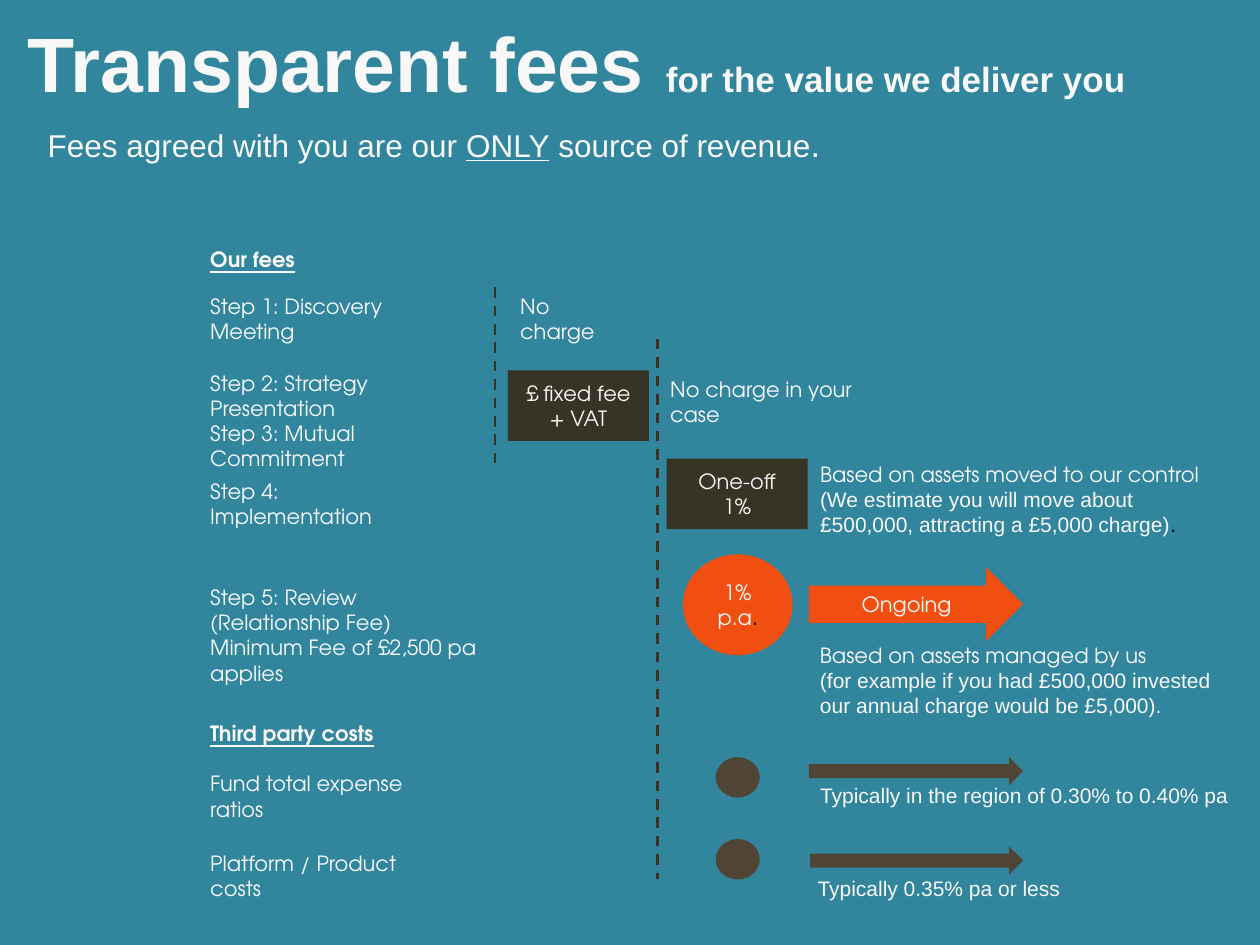
from lxml.etree import SubElement
from pptx import Presentation
from pptx.dml.color import RGBColor
from pptx.enum.dml import MSO_LINE
from pptx.enum.shapes import MSO_CONNECTOR, MSO_SHAPE
from pptx.enum.text import MSO_ANCHOR, MSO_AUTO_SIZE, PP_ALIGN
from pptx.oxml.ns import qn
from pptx.util import Inches, Pt

TEAL = RGBColor(0x31, 0x85, 0x9C)
WHITE = RGBColor(0xF8, 0xF8, 0xF8)
BLACK = RGBColor(0, 0, 0)
DARK = RGBColor(0x38, 0x34, 0x25)
BROWN = RGBColor(0x50, 0x44, 0x34)
ORANGE = RGBColor(0xF1, 0x4F, 0x11)

BODY = {"font": "TeX Gyre Adventor", "size": 12}
PLAIN = {"font": "Arial", "size": 12}
HEADING = {**BODY, "bold": True, "underline": True}
TITLE = {"font": "Arial", "size": 44, "bold": True}
SUBTITLE = {"font": "Arial", "size": 18}

TITLE_BOX = (0.12, 0.07, 9.76, 0.84)
TITLE_TEXT = [[
    ("Transparent fees ", TITLE),
    ("for the value we deliver you", {**TITLE, "size": 20}),
]]
SUBTITLE_BOX = (0.28, 0.92, 7.08, 0.44)
SUBTITLE_TEXT = [[
    ("Fees agreed with you are our ", SUBTITLE),
    ("ONLY", {**SUBTITLE, "underline": True}),
    (" source of revenue", SUBTITLE),
    (".", {**SUBTITLE, "size": 20}),
]]

LABEL_LEFT = 1.57
LABELS = [
    (1.91, 0.9, 0.3, HEADING, ["Our fees"]),
    (2.28, 2.16, 0.3, BODY, ["Step 1: Discovery Meeting"]),
    (2.89, 2.4, 0.5, BODY, ["Step 2: Strategy Presentation", "Step 3: Mutual Commitment"]),
    (3.75, 1.93, 0.3, BODY, ["Step 4: Implementation"]),
    (4.59, 2.78, 0.71, BODY, [
        "Step 5: Review", "(Relationship Fee)", "Minimum Fee of £2,500 pa applies",
    ]),
    (5.67, 1.57, 0.3, HEADING, ["Third party costs"]),
    (6.07, 2.1, 0.3, BODY, ["Fund total expense ratios"]),
    (6.7, 1.99, 0.3, BODY, ["Platform / Product costs"]),
]

NOTES = [
    ((4.03, 2.28, 0.98, 0.3), [[("No charge", BODY)]]),
    ((5.22, 2.94, 1.93, 0.3), [[("No charge in your case", BODY)]]),
    ((6.41, 3.61, 3.39, 0.91), [
        [("Based on assets moved to our control", BODY)],
        [("(We estimate you will move about £500,000, attracting a £5,000 charge)", PLAIN),
         (".", {**PLAIN, "color": BLACK})],
    ]),
    ((6.41, 5.05, 3.34, 0.91), [
        [("Based on assets managed by us", BODY)],
        [("(for example if you had £500,000 invested", PLAIN)],
        [("our annual charge would be £5,000).", PLAIN)],
    ]),
    ((6.41, 6.16, 3.51, 0.51), [[("Typically in the region of 0.30% to 0.40% pa", PLAIN)]]),
    ((6.39, 6.9, 2.19, 0.5), [[("Typically 0.35% pa or less", PLAIN)]]),
]

FEES = [
    (MSO_SHAPE.RECTANGLE, (4.03, 2.94, 1.12, 0.56), DARK, [[("£ fixed fee + VAT", BODY)]]),
    (MSO_SHAPE.RECTANGLE, (5.29, 3.64, 1.12, 0.56), DARK,
     [[("One-off", BODY)], [("1%", BODY)]]),
    (MSO_SHAPE.OVAL, (5.42, 4.4, 0.87, 0.8), ORANGE,
     [[("1%", BODY)], [("p.a", BODY), (".", {**BODY, "color": BLACK})]]),
    (MSO_SHAPE.RIGHT_ARROW, (6.42, 4.5, 1.7, 0.59), ORANGE, [[("Ongoing", BODY)]]),
    (MSO_SHAPE.OVAL, (5.68, 6.01, 0.35, 0.32), BROWN, []),
    (MSO_SHAPE.RIGHT_ARROW, (6.42, 6.01, 1.7, 0.22), BROWN, []),
    (MSO_SHAPE.OVAL, (5.68, 6.66, 0.35, 0.32), BROWN, []),
    (MSO_SHAPE.RIGHT_ARROW, (6.43, 6.72, 1.69, 0.22), BROWN, []),
]

DIVIDERS = [(3.93, 2.28, 3.69), (5.22, 2.69, 6.98)]


def write(frame, paragraphs, alignment=PP_ALIGN.LEFT, anchor=MSO_ANCHOR.TOP):
    frame.word_wrap = True
    frame.vertical_anchor = anchor
    for index, runs in enumerate(paragraphs):
        paragraph = frame.add_paragraph() if index else frame.paragraphs[0]
        paragraph.alignment = alignment
        for text, style in runs:
            run = paragraph.add_run()
            run.text = text
            run.font.name = style["font"]
            run.font.size = Pt(style["size"])
            run.font.bold = style.get("bold", False)
            run.font.underline = style.get("underline", False)
            run.font.color.rgb = style.get("color", WHITE)


def add_text(slide, box, paragraphs):
    shape = slide.shapes.add_textbox(*map(Inches, box))
    write(shape.text_frame, paragraphs)
    shape.text_frame.auto_size = MSO_AUTO_SIZE.SHAPE_TO_FIT_TEXT


def add_title(slide):
    title = slide.shapes.title
    title.left, title.top, title.width, title.height = map(Inches, TITLE_BOX)
    write(title.text_frame, TITLE_TEXT)
    title.text_frame.auto_size = MSO_AUTO_SIZE.SHAPE_TO_FIT_TEXT


def add_fee(slide, kind, box, color, paragraphs):
    shape = slide.shapes.add_shape(kind, *map(Inches, box))
    shape.shadow.inherit = False
    shape.fill.solid()
    shape.fill.fore_color.rgb = color
    shape.line.fill.background()
    write(shape.text_frame, paragraphs, PP_ALIGN.CENTER, MSO_ANCHOR.MIDDLE)


def add_divider(slide, x, top, bottom):
    divider = slide.shapes.add_connector(
        MSO_CONNECTOR.STRAIGHT, Inches(x), Inches(top), Inches(x), Inches(bottom))
    divider.line.color.rgb = DARK
    divider.line.width = Pt(1.5)
    divider.line.dash_style = MSO_LINE.DASH
    SubElement(divider._element.spPr, qn("a:effectLst"))


def main():
    presentation = Presentation()
    presentation.slide_width, presentation.slide_height = Inches(10), Inches(7.5)
    slide = presentation.slides.add_slide(presentation.slide_layouts[5])
    slide.background.fill.solid()
    slide.background.fill.fore_color.rgb = TEAL

    add_title(slide)
    add_text(slide, SUBTITLE_BOX, SUBTITLE_TEXT)
    for top, width, height, style, lines in LABELS:
        add_text(slide, (LABEL_LEFT, top, width, height), [[(line, style)] for line in lines])
    for box, paragraphs in NOTES:
        add_text(slide, box, paragraphs)
    for fee in FEES:
        add_fee(slide, *fee)
    for divider in DIVIDERS:
        add_divider(slide, *divider)
    presentation.save("out.pptx")


if __name__ == "__main__":
    main()
